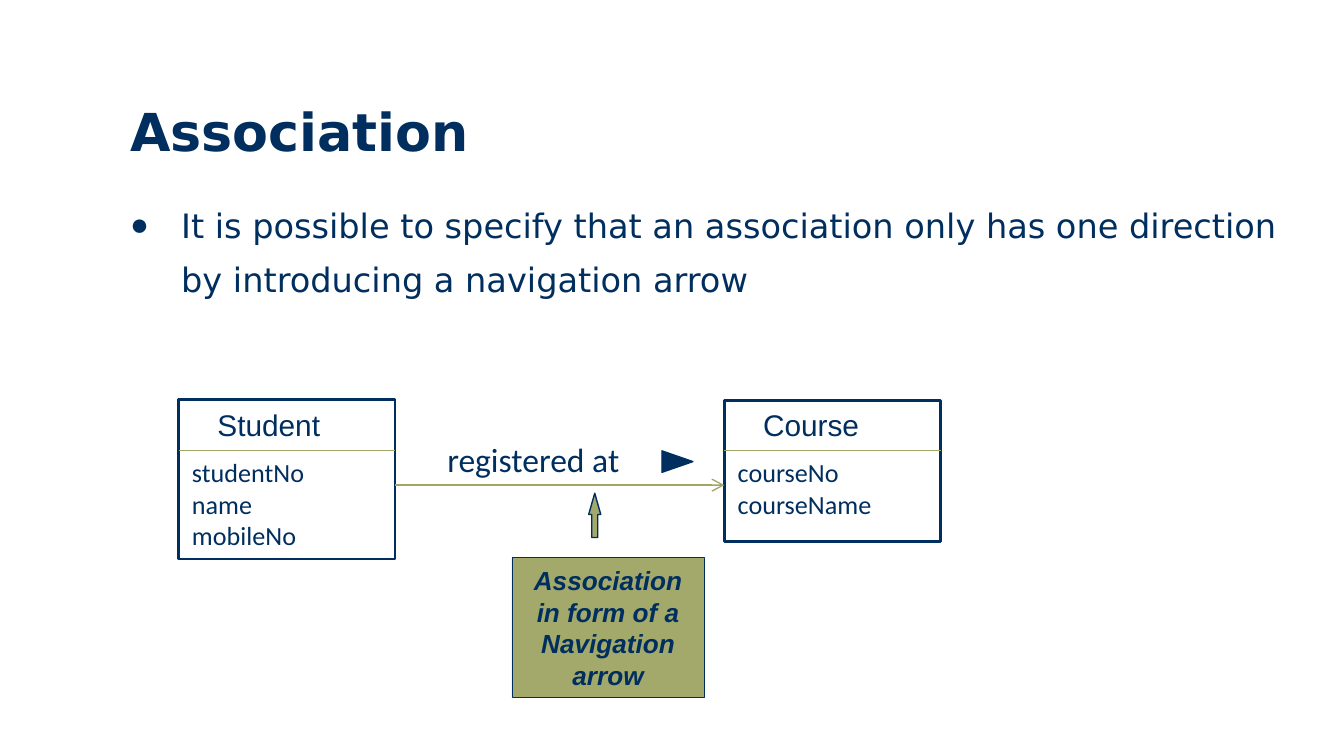
from dataclasses import dataclass

from lxml.etree import SubElement
from pptx import Presentation
from pptx.dml.color import RGBColor
from pptx.enum.shapes import MSO_CONNECTOR, MSO_SHAPE as Shape
from pptx.enum.text import MSO_ANCHOR as Anchor, PP_ALIGN as Align
from pptx.oxml.ns import qn
from pptx.util import Inches, Pt


@dataclass(frozen=True)
class Theme:
    navy: str = "002F5F"
    white: str = "FFFFFF"
    olive: str = "A3A86B"
    rule: str = "A1A667"
    heading_font: str = "DejaVu Sans"
    label_font: str = "Arial"
    detail_font: str = "Calibri"
    title_size: int = 28
    body_size: int = 18
    name_size: int = 16
    detail_size: int = 14


@dataclass(frozen=True)
class UmlClass:
    name: str
    attributes: tuple[str, ...]
    left: float
    top: float
    height: float
    list_height: float


THEME = Theme()
CLASS_WIDTH = 1.61
NAME_TOP, DIVIDER_Y, ASSOCIATION_Y = 2.98, 3.35, 3.61
STUDENT = UmlClass("Student", ("studentNo", "name", "mobileNo"), 1.33, 2.97, 1.19, 0.81)
COURSE = UmlClass("Course", ("courseNo", "courseName"), 5.39, 2.98, 1.05, 0.57)


def write(frame, *lines: str, size: int, font: str, bold=False, italic=False,
          align=Align.LEFT, anchor=Anchor.TOP, bullet="", line_spacing=None) -> None:
    """Fill a text frame with one paragraph per line."""
    frame.word_wrap = True
    frame.vertical_anchor = anchor
    for index, line in enumerate(lines):
        paragraph = frame.paragraphs[0] if index == 0 else frame.add_paragraph()
        paragraph.text = line
        paragraph.alignment = align
        if line_spacing:
            paragraph.line_spacing = Pt(line_spacing)
        if bullet:
            properties = paragraph._p.get_or_add_pPr()
            properties.set("marL", str(Inches(0.38)))
            properties.set("indent", str(Inches(-0.38)))
            SubElement(properties, qn("a:buSzPct"), val="93000")
            SubElement(properties, qn("a:buFont"), typeface=THEME.label_font)
            SubElement(properties, qn("a:buChar"), char=bullet)
        style = paragraph.font
        style.size, style.name = Pt(size), font
        style.bold, style.italic = bold, italic
        style.color.rgb = RGBColor.from_string(THEME.navy)


def add_text(slide, box: tuple[float, ...], *lines: str, **style) -> None:
    write(slide.shapes.add_textbox(*map(Inches, box)).text_frame, *lines, **style)


def add_block(slide, kind: Shape, box: tuple[float, ...], fill: str,
              weight: float = 0.75, rotation: float = 0):
    block = slide.shapes.add_shape(kind, *map(Inches, box))
    block.shadow.inherit = False
    block.fill.solid()
    block.fill.fore_color.rgb = RGBColor.from_string(fill)
    block.line.color.rgb = RGBColor.from_string(THEME.navy)
    block.line.width = Pt(weight)
    block.rotation = rotation
    return block


def add_rule(slide, left: float, right: float, y: float, arrow: bool = False) -> None:
    rule = slide.shapes.add_connector(
        MSO_CONNECTOR.STRAIGHT, Inches(left), Inches(y), Inches(right), Inches(y))
    rule.line.color.rgb = RGBColor.from_string(THEME.rule)
    rule.line.width = Pt(0.75)
    if arrow:
        SubElement(rule.line._get_or_add_ln(), qn("a:tailEnd"), type="arrow")
    SubElement(rule._element.spPr, qn("a:effectLst"))


def add_class(slide, uml: UmlClass) -> None:
    add_block(slide, Shape.RECTANGLE, (uml.left, uml.top, CLASS_WIDTH, uml.height),
              THEME.white, weight=1.5)
    add_text(slide, (uml.left + 0.19, NAME_TOP, 1.57, 0.37), uml.name,
             size=THEME.name_size, font=THEME.label_font)
    add_rule(slide, uml.left, uml.left + CLASS_WIDTH, DIVIDER_Y)
    add_text(slide, (uml.left, DIVIDER_Y, 1.29, uml.list_height), *uml.attributes,
             size=THEME.detail_size, font=THEME.detail_font)


def main() -> None:
    # Widescreen page, 16:9
    deck = Presentation()
    deck.slide_width, deck.slide_height = Inches(10), Inches(10) * 9 // 16
    slide = deck.slides.add_slide(deck.slide_layouts[6])

    # Explanation and title
    add_text(slide, (0.87, 1.37, 8.74, 3.54),
             "It is possible to specify that an association only has one direction "
             "by introducing a navigation arrow",
             size=THEME.body_size, font=THEME.heading_font, bullet="●", line_spacing=29)
    add_text(slide, (0.87, 0.69, 9.13, 0.65), "Association", size=THEME.title_size,
             font=THEME.heading_font, bold=True)

    # Classes
    for uml in (STUDENT, COURSE):
        add_class(slide, uml)

    # Association with its reading direction
    add_rule(slide, STUDENT.left + CLASS_WIDTH, COURSE.left, ASSOCIATION_Y, arrow=True)
    add_text(slide, (3.23, 3.22, 1.73, 0.4), "registered at",
             size=THEME.body_size, font=THEME.detail_font)
    add_block(slide, Shape.ISOSCELES_TRIANGLE, (4.96, 3.32, 0.16, 0.23),
              THEME.navy, rotation=90)

    # Callout pointing at the association
    callout = add_block(slide, Shape.RECTANGLE, (3.81, 4.15, 1.43, 1.04),
                        THEME.olive, weight=0.25)
    write(callout.text_frame, "Association in form of a Navigation arrow",
          size=THEME.detail_size, font=THEME.label_font, bold=True, italic=True,
          align=Align.CENTER, anchor=Anchor.MIDDLE)
    pointer = add_block(slide, Shape.LEFT_ARROW, (4.26, 3.79, 0.33, 0.09),
                        THEME.olive, rotation=90)
    pointer.adjustments[1] = 1.76

    deck.save("out.pptx")


if __name__ == "__main__":
    main()
